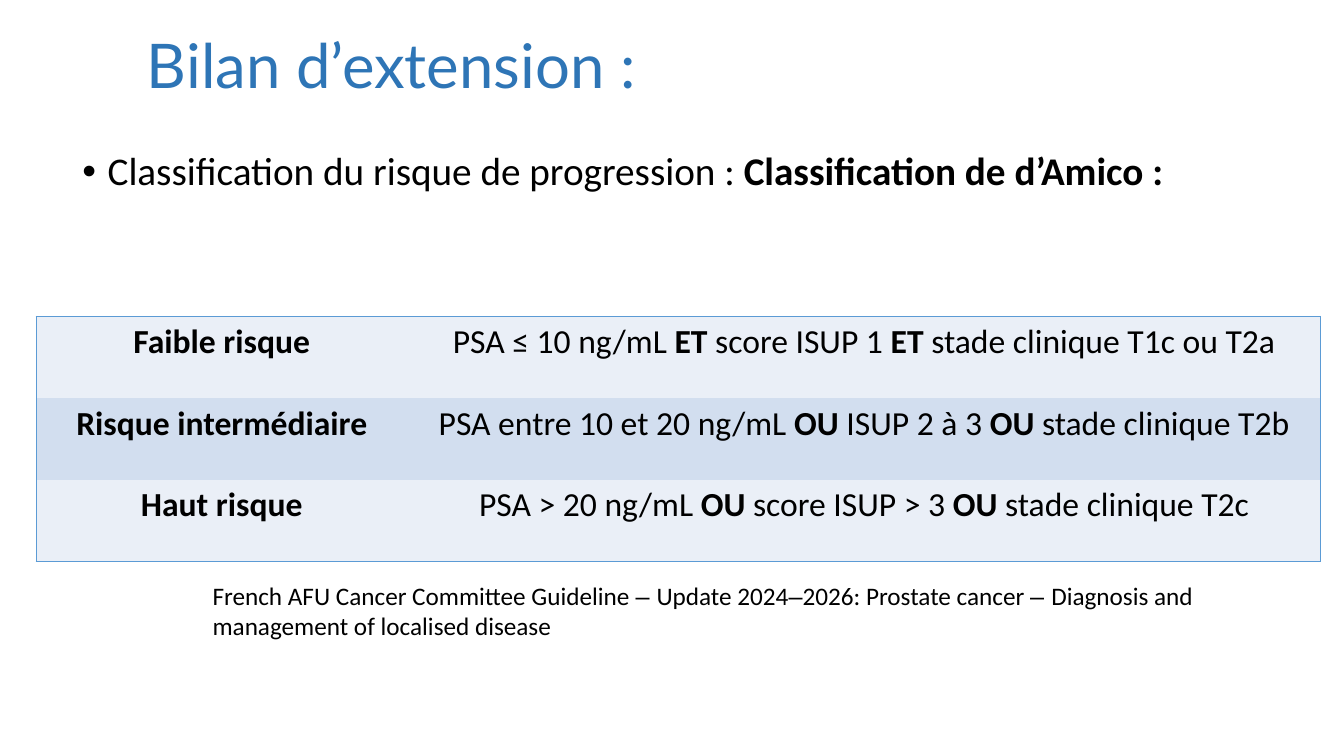
from lxml import etree
from pptx import Presentation
from pptx.dml import color
from pptx.enum import text
from pptx.oxml import ns
from pptx.util import Emu, Pt

PX = 9144
THEME = {
    "title": {"name": "Lato", "size": Pt(44), "color": "2E75B6"},
    "body": {"name": "Calibri", "size": Pt(28), "color": "000000"},
    "table": {"name": "Calibri", "size": Pt(24), "color": "000000"},
    "source": {"name": "Calibri", "size": Pt(18), "color": "000000"},
    "border": "5B9BD5",
    "bands": ["EAEFF7", "D2DEEF"],
}
BOLD = {"bold": True}
DASH = {"name": "Arial"}


def write(paragraph, style, pieces, accent=BOLD):
    for index, piece in enumerate(pieces):
        span = paragraph.add_run()
        span.text = piece
        values = {"bold": False, **THEME[style], **(accent if index % 2 else {})}
        span.font.color.rgb = color.RGBColor.from_string(values.pop("color"))
        for name, value in values.items():
            setattr(span.font, name, value)


def add_box(left, top, width, height, anchor=text.MSO_ANCHOR.TOP):
    box = page.shapes.add_textbox(*[Emu(side * PX) for side in (left, top, width, height)])
    box.text_frame.word_wrap = True
    box.text_frame.vertical_anchor = anchor
    return box.text_frame.paragraphs[0]


deck = Presentation()
deck.slide_width, deck.slide_height = Emu(1333 * PX), Emu(750 * PX)
page = deck.slides.add_slide(deck.slide_layouts[6])

title = add_box(136, 26, 1023, 84, text.MSO_ANCHOR.MIDDLE)
title.line_spacing = 0.9
write(title, "title", ["Bilan d’extension :"])

bullet = add_box(72, 146, 1150, 540)
bullet.line_spacing = 0.9
properties = bullet._p.get_or_add_pPr()
properties.set("marL", str(25 * PX))
properties.set("indent", str(-25 * PX))
etree.SubElement(properties, ns.qn("a:buFont"), typeface="Arial")
etree.SubElement(properties, ns.qn("a:buChar"), char="•")
write(bullet, "body", ["Classification du risque de progression : ", "Classification de d’Amico :"])

risks = [
    ("Faible risque",
     ["PSA ≤ 10 ng/mL ", "ET", " score ISUP 1 ", "ET", " stade clinique T1c ou T2a"]),
    ("Risque intermédiaire",
     ["PSA entre 10 et 20 ng/mL ", "OU", " ISUP 2 à 3 ", "OU", " stade clinique T2b"]),
    ("Haut risque",
     ["PSA > 20 ng/mL ", "OU", " score ISUP > 3 ", "OU", " stade clinique T2c"]),
]
widths = [368, 906]
row_height = 81
table = page.shapes.add_table(
    len(risks), len(widths), Emu(36 * PX), Emu(314 * PX),
    Emu(sum(widths) * PX), Emu(row_height * len(risks) * PX)).table
table.first_row = False
for column, width in zip(table.columns, widths):
    column.width = Emu(width * PX)

for row, (label, criteria) in enumerate(risks):
    table.rows[row].height = Emu(row_height * PX)
    for column, pieces in enumerate((["", label], criteria)):
        cell = table.cell(row, column)
        outer = {"L": column == 0, "R": column == len(widths) - 1,
                 "T": row == 0, "B": row == len(risks) - 1}
        for side, drawn in outer.items():
            line = etree.SubElement(cell._tc.get_or_add_tcPr(), ns.qn("a:ln" + side), w=str(Pt(1)))
            if drawn:
                fill = etree.SubElement(line, ns.qn("a:solidFill"))
                etree.SubElement(fill, ns.qn("a:srgbClr"), val=THEME["border"])
            else:
                etree.SubElement(line, ns.qn("a:noFill"))
        cell.fill.solid()
        cell.fill.fore_color.rgb = color.RGBColor.from_string(THEME["bands"][row % 2])
        paragraph = cell.text_frame.paragraphs[0]
        paragraph.alignment = text.PP_ALIGN.CENTER
        write(paragraph, "table", [piece for piece in pieces] if column else [label])
        if column == 0:
            paragraph.runs[0].font.bold = True

source = add_box(201, 571, 1151, 101)
write(source, "source", [
    "French AFU Cancer Committee Guideline ", "– ", "Update 2024", "–",
    "2026: Prostate cancer ", "– ", "Diagnosis and"], DASH)
source.add_line_break()
write(source, "source", ["management of localised disease"])

deck.save("out.pptx")
